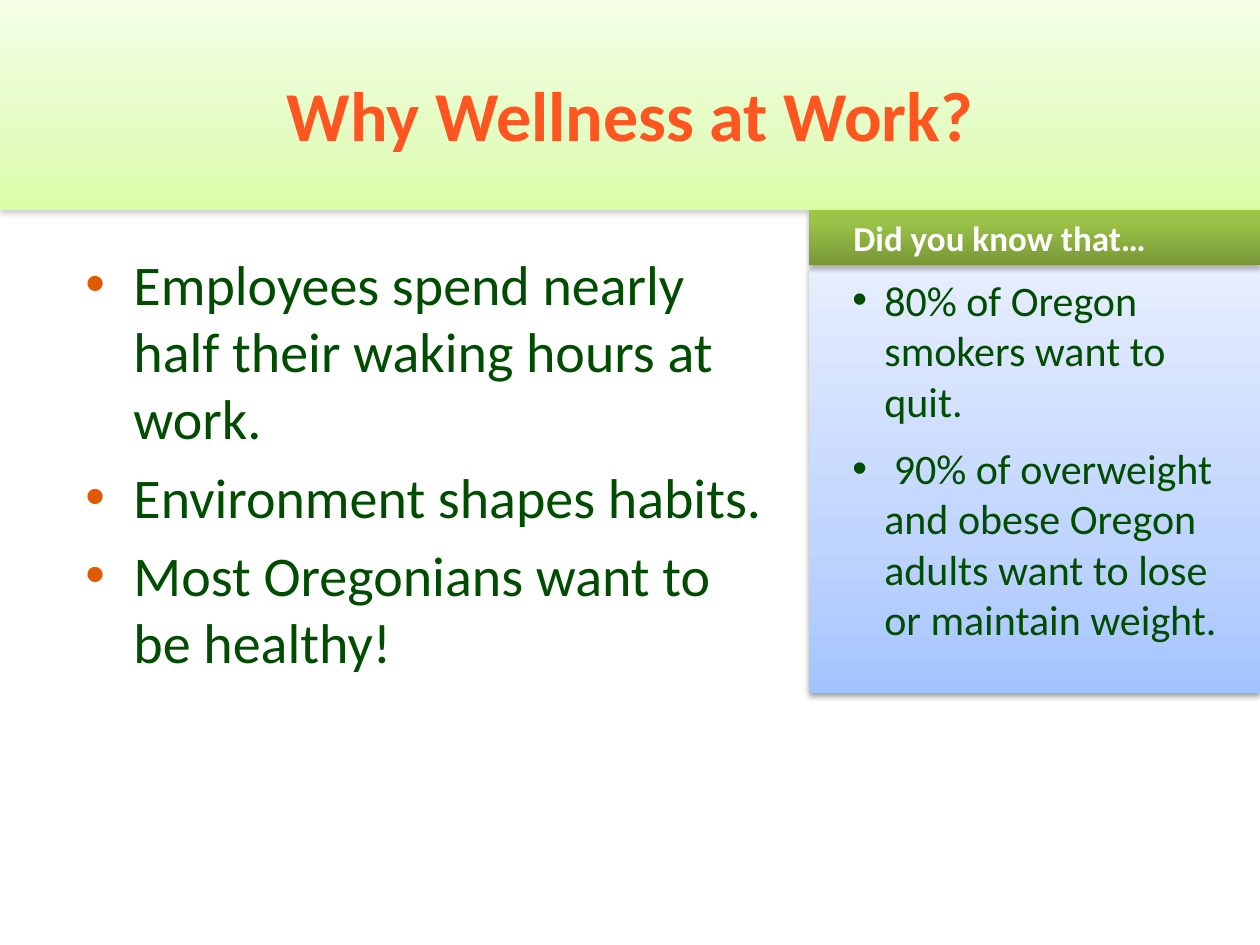
from lxml.etree import SubElement as Sub
from pptx import Presentation
from pptx.dml.color import RGBColor as Color
from pptx.enum.shapes import MSO_SHAPE as Shape
from pptx.enum.text import MSO_ANCHOR as Anchor, PP_ALIGN as Align
from pptx.oxml import parse_xml
from pptx.oxml.ns import nsdecls, qn
from pptx.util import Pt

PX = 914400 / 126
GREEN = "004C00"

deck = Presentation()
deck.slide_width, deck.slide_height = int(1260 * PX), int(945 * PX)
slide = deck.slides.add_slide(deck.slide_layouts[6])


def panel(box, stops, shade, alpha):
    """Add a rectangle with an upward gradient and a soft shadow."""
    rect = slide.shapes.add_shape(Shape.RECTANGLE, *[int(v * PX) for v in box])
    rect.line.fill.background()
    props = rect._element.spPr
    marks = "".join(
        f'<a:gs pos="{pos * 1000}"><a:srgbClr val="{tone}"/></a:gs>'
        for pos, tone in stops)
    props.insert(2, parse_xml(
        f'<a:gradFill {nsdecls("a")}><a:gsLst>{marks}</a:gsLst>'
        '<a:lin ang="16200000" scaled="0"/></a:gradFill>'))
    props.append(parse_xml(
        f'<a:effectLst {nsdecls("a")}><a:outerShdw blurRad="40000" '
        'dist="20000" dir="5400000" rotWithShape="0">'
        f'<a:srgbClr val="{shade}"><a:alpha val="{alpha * 1000}"/></a:srgbClr>'
        '</a:outerShdw></a:effectLst>'))
    return rect


def write(shape, lines, tone, form, left=0, hang=0, gap=0, dot=None,
          align=Align.LEFT, anchor=Anchor.TOP):
    """Fill a shape with paragraphs, bulleted when a dot colour is given."""
    frame = shape.text_frame
    frame.word_wrap = True
    frame.vertical_anchor = anchor
    for i, line in enumerate(lines):
        para = frame.add_paragraph() if i else frame.paragraphs[0]
        para.text = line
        para.alignment = align
        props = para._p.get_or_add_pPr()
        props.set("marL", str(int(left * PX)))
        props.set("indent", str(int(-hang * PX)))
        if dot:
            Sub(Sub(props, qn("a:buClr")), qn("a:srgbClr"), val=dot)
            Sub(props, qn("a:buFont"), typeface="Arial")
            Sub(props, qn("a:buChar"), char="•")
        if i:
            para.space_before = Pt(gap)
        for key, val in form.items():
            setattr(para.font, key, val)
        para.font.color.rgb = Color.from_string(tone)


# Background and top band
back = slide.background.fill
back.solid()
back.fore_color.rgb = Color.from_string("FFFFFF")
panel((0, 0, 1260, 210),
      [(0, "DAFDA7"), (35, "E4FCC2"), (100, "F5FFE7")], "808080", 38)

# Title
title = slide.shapes.add_textbox(*[int(v * PX) for v in (63, 38, 1134, 151)])
write(title, ["Why Wellness at Work?"], "FF5521",
      {"name": "Calibri", "size": Pt(40), "bold": True},
      align=Align.CENTER, anchor=Anchor.MIDDLE)

# Main points
body = slide.shapes.add_textbox(*[int(v * PX) for v in (73, 243, 714, 566)])
write(body, ["Employees spend nearly half their waking hours at work.",
             "Environment shapes habits.",
             "Most Oregonians want to be healthy!"], GREEN,
      {"name": "Calibri", "size": Pt(32)},
      left=48, hang=48, gap=6.4, dot="E15A00")

# Side facts
facts = panel((809, 268, 451, 425),
              [(0, "A4C4FF"), (35, "BFD4FF"), (100, "E6EEFF")], "000000", 38)
write(facts, ["80% of Oregon smokers want to quit.",
              " 90% of overweight and obese Oregon adults want to lose "
              "or maintain weight."], GREEN,
      {"name": "Calibri", "size": Pt(24)},
      left=63, hang=32, gap=9.7, dot=GREEN)

# Side heading
head = panel((809, 210, 451, 55),
             [(0, "779737"), (80, "9BC348"), (100, "9DC746")], "000000", 35)
write(head, ["Did you know that…"], "FFFFFF",
      {"name": "Calibri", "size": Pt(20), "bold": True}, left=32)

deck.save("out.pptx")
